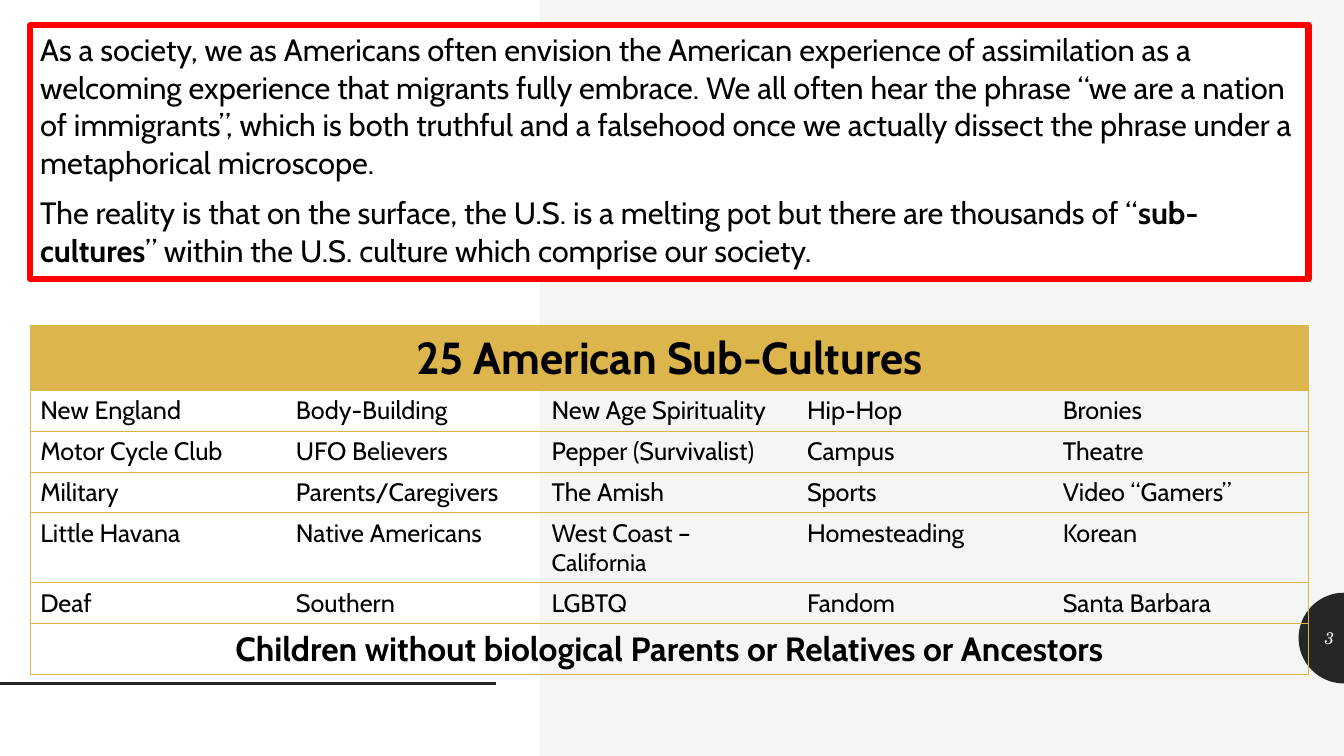
from math import cos, pi, sin

from lxml import etree
from pptx import Presentation
from pptx import util as u
from pptx.dml.color import RGBColor
from pptx.enum import shapes, text
from pptx.oxml import ns

BLACK = RGBColor(0x00, 0x00, 0x00)
WHITE = RGBColor(0xFF, 0xFF, 0xFF)
PALE = RGBColor(0xF5, 0xF5, 0xF5)
DARK = RGBColor(0x26, 0x26, 0x26)
RED = RGBColor(0xFF, 0x00, 0x00)
GOLD = RGBColor(0xDC, 0xB6, 0x4D)

WIDTH, HEIGHT = 960, 540
MARGIN, CONTENT_WIDTH = 21.6, 913

INTRO = [
    [("As a society, we as Americans often envision the American experience of "
      "assimilation as a welcoming experience that migrants fully embrace. We all "
      "often hear the phrase “we are a nation of immigrants”, which is both truthful "
      "and a falsehood once we actually dissect the phrase under a metaphorical "
      "microscope.", {})],
    [("The reality is that on the surface, the U.S. is a melting pot but there are "
      "thousands of “", {}),
     ("sub-cultures", {"bold": True}),
     ("” within the U.S. culture which comprise our society.", {})],
]
TITLE = [("25 American Sub-Cultures", {"size": u.Pt(32), "bold": True})]
FOOTER = [("Children without biological Parents or Relatives or Ancestors",
           {"size": u.Pt(24), "bold": True})]
CULTURES = [
    ["New England", "Body-Building", "New Age Spirituality", "Hip-Hop", "Bronies"],
    ["Motor Cycle Club", "UFO Believers", "Pepper (Survivalist)", "Campus", "Theatre"],
    ["Military", "Parents/Caregivers", "The Amish", "Sports", "Video “Gamers”"],
    ["Little Havana", "Native Americans",
     [("West Coast – ", {}), ("California", {"size": u.Pt(17)})],
     "Homesteading", "Korean"],
    ["Deaf", "Southern", "LGBTQ", "Fandom", "Santa Barbara"],
]
ROW_HEIGHTS = [46, 29.2, 29.2, 29.2, 50, 29.2, 36.4]


class Page:
    def __init__(self, deck, font, background):
        self.page = deck.slides.add_slide(deck.slide_layouts[6])
        self.font = font
        self.page.background.fill.solid()
        self.page.background.fill.fore_color.rgb = background

    def paint(self, shape, fill, line=None, weight=0):
        shape.shadow.inherit = False
        shape.fill.solid()
        shape.fill.fore_color.rgb = fill
        if line is None:
            shape.line.fill.background()
        else:
            shape.line.color.rgb = line
            shape.line.width = u.Pt(weight)
        return shape

    def add_spans(self, para, spans, color=BLACK, align=text.PP_ALIGN.LEFT, **style):
        para.alignment = align
        for words, changes in spans:
            span = para.add_run()
            span.text = words
            span.font.color.rgb = color
            for name, value in {"name": self.font, **style, **changes}.items():
                setattr(span.font, name, value)

    def rectangle(self, left, top, width, height, fill, line=None, weight=0):
        box = self.page.shapes.add_shape(
            shapes.MSO_SHAPE.RECTANGLE, *map(u.Pt, (left, top, width, height)))
        return self.paint(box, fill, line, weight)

    def half_disc(self, x, y, radius, fill, steps=48):
        angles = [pi / 2 + pi * step / steps for step in range(steps + 1)]
        points = [(u.Pt(x + radius * cos(a)), u.Pt(y - radius * sin(a))) for a in angles]
        builder = self.page.shapes.build_freeform(*points[0])
        builder.add_line_segments(points[1:], close=True)
        return self.paint(builder.convert_to_shape(), fill)

    def rule(self, left, right, y, color, weight):
        line = self.page.shapes.add_connector(
            shapes.MSO_CONNECTOR.STRAIGHT, *map(u.Pt, (left, y, right, y)))
        line.line.color.rgb = color
        line.line.width = u.Pt(weight)
        etree.SubElement(line._element.spPr, ns.qn("a:effectLst"))

    def label(self, left, top, width, height, words, color, align, **style):
        box = self.page.shapes.add_textbox(*map(u.Pt, (left, top, width, height)))
        box.text_frame.word_wrap = True
        box.text_frame.vertical_anchor = text.MSO_ANCHOR.MIDDLE
        self.add_spans(box.text_frame.paragraphs[0], [(words, {})], color, align, **style)

    def paragraphs(self, box, paras, spacing, before, **style):
        frame = box.text_frame
        frame.word_wrap = True
        frame.vertical_anchor = text.MSO_ANCHOR.TOP
        for index, spans in enumerate(paras):
            para = frame.add_paragraph() if index else frame.paragraphs[0]
            para.line_spacing = spacing
            if index:
                para.space_before = u.Pt(before)
            self.add_spans(para, spans, **style)

    def border(self, cell, side, color, weight=0.5):
        line = etree.SubElement(
            cell._tc.get_or_add_tcPr(), ns.qn(f"a:ln{side}"), w=str(u.Pt(weight)))
        if color is None:
            etree.SubElement(line, ns.qn("a:noFill"))
        else:
            fill = etree.SubElement(line, ns.qn("a:solidFill"))
            etree.SubElement(fill, ns.qn("a:srgbClr"), val=str(color))

    def table(self, left, top, width, heights, title, rows, footer, color, **style):
        columns, last = len(rows[0]), len(heights) - 1
        table = self.page.shapes.add_table(
            len(heights), columns, *map(u.Pt, (left, top, width, sum(heights)))).table
        table.first_row = table.horz_banding = False
        for column in table.columns:
            column.width = u.Pt(width / columns)
        for row, height in zip(table.rows, heights):
            row.height = u.Pt(height)
        for row in range(last + 1):
            for column in range(columns):
                cell = table.cell(row, column)
                spanned = row in (0, last)
                self.border(cell, "L", None if column else color)
                self.border(cell, "R", color if spanned or column == columns - 1 else None)
                self.border(cell, "T", color)
                self.border(cell, "B", color)
                if row == 0:
                    cell.fill.solid()
                    cell.fill.fore_color.rgb = color
                else:
                    cell.fill.background()
                if not spanned:
                    words = rows[row - 1][column]
                    spans = [(words, {})] if isinstance(words, str) else words
                    self.add_spans(cell.text_frame.paragraphs[0], spans, **style)
        for row, spans in ((0, title), (last, footer)):
            cell = table.cell(row, 0)
            cell.merge(table.cell(row, columns - 1))
            self.add_spans(cell.text_frame.paragraphs[0], spans,
                           align=text.PP_ALIGN.CENTER, **style)


def main():
    deck = Presentation()
    deck.slide_width, deck.slide_height = u.Pt(WIDTH), u.Pt(HEIGHT)
    page = Page(deck, "Cabin", PALE)
    page.half_disc(WIDTH, 455.8, 32.4, DARK)
    page.rectangle(0, 0, 385.5, HEIGHT, WHITE)
    page.rule(0, 354.3, 488, DARK, 2)
    page.label(WIDTH - 32.4, 441.4, 32.4, 28.8, "3", PALE, text.PP_ALIGN.RIGHT,
               name="TeX Gyre Schola", size=u.Pt(12), italic=True)
    intro = page.rectangle(MARGIN, 18, CONTENT_WIDTH, 181.5, WHITE, RED, 4.5)
    page.paragraphs(intro, INTRO, 1.02, 9, size=u.Pt(22))
    page.table(MARGIN, 232.7, CONTENT_WIDTH, ROW_HEIGHTS, TITLE, CULTURES, FOOTER,
               GOLD, size=u.Pt(18))
    deck.save("out.pptx")


if __name__ == "__main__":
    main()
